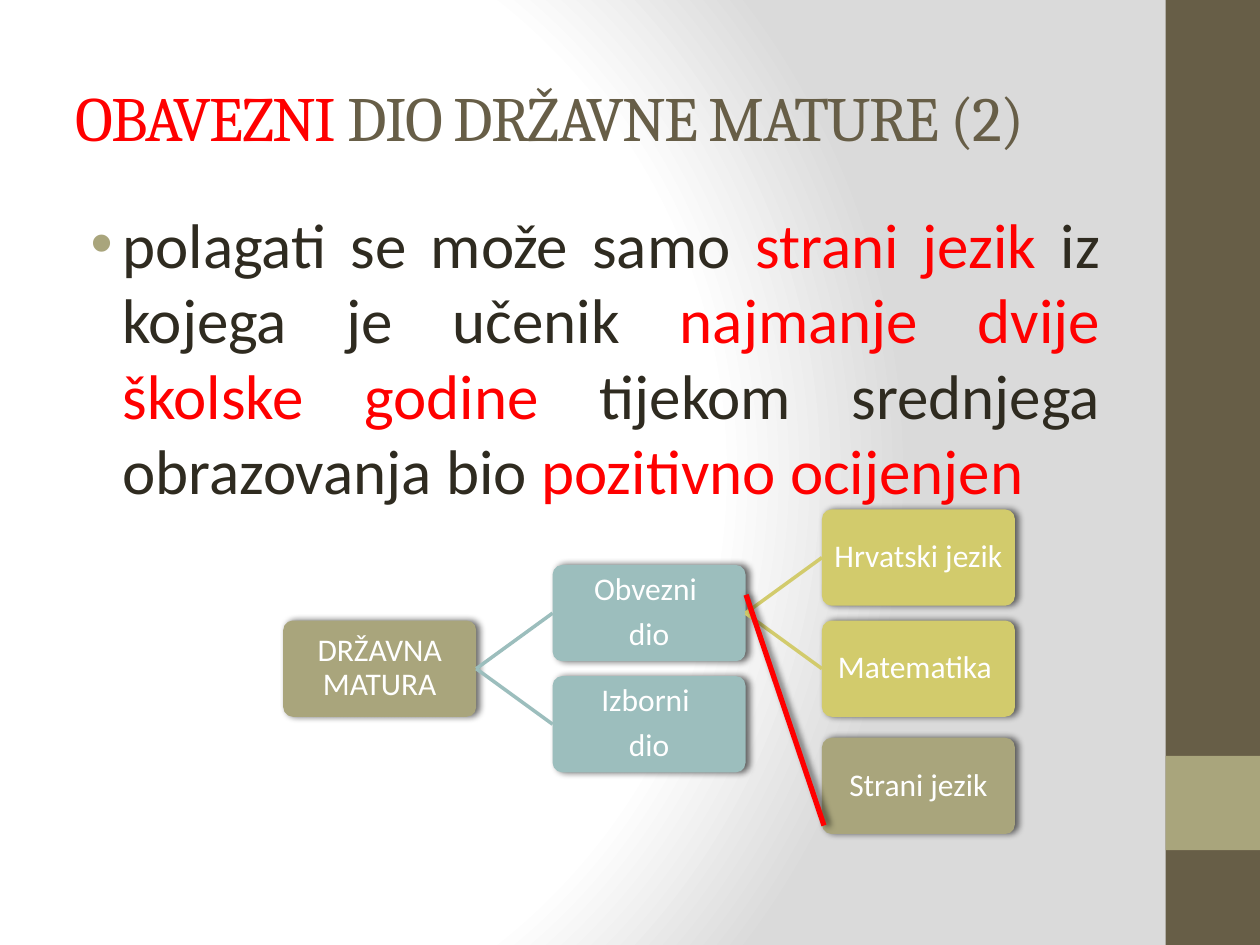
import lxml.etree
import pptx
import pptx.dml.color
import pptx.enum.shapes
import pptx.enum.text
import pptx.oxml
import pptx.oxml.ns
import pptx.util
from pptx.util import Cm

COLORS = {
    "white": "FFFFFF", "grey": "DADADA", "brown": "675E47", "olive": "A9A57C",
    "teal": "9CBEBD", "yellow": "D2CB6C", "red": "FF0000", "ink": "2F2B20", "black": "000000",
}
TITLE = [("OBAVEZNI", "red"), (" DIO DRŽAVNE MATURE (2)", "brown")]
BODY = [
    ("polagati se može samo ", "ink"), ("strani jezik", "red"),
    (" iz kojega je učenik ", "ink"), ("najmanje dvije školske godine", "red"),
    (" tijekom srednjega obrazovanja bio ", "ink"), ("pozitivno ocijenjen", "red"),
]
NODES = {
    "exam": (["DRŽAVNA MATURA"], 0, 2, "olive"),
    "required": (["Obvezni ", "dio"], 1, 1, "teal"),
    "elective": (["Izborni ", "dio"], 1, 3, "teal"),
    "croatian": (["Hrvatski jezik"], 2, 0, "yellow"),
    "maths": (["Matematika "], 2, 2, "yellow"),
    "foreign": (["Strani jezik"], 2, 4.11, "olive"),
}
LINKS = [("exam", "required"), ("exam", "elective"), ("required", "croatian"), ("required", "maths")]
TREE_LEFT, TREE_TOP, COLUMN_STEP, ROW_STEP = 5.71, 10.27, 5.43, 1.12
NODE_WIDTH, NODE_HEIGHT = 3.89, 1.94
SHAPES = pptx.enum.shapes.MSO_SHAPE
ALIGN = pptx.enum.text.PP_ALIGN
MIDDLE = pptx.enum.text.MSO_ANCHOR.MIDDLE
NAMESPACE = pptx.oxml.ns.nsdecls("a")


def rgb(name):
    return pptx.dml.color.RGBColor.from_string(COLORS[name])


def set_background(slide):
    stops = "".join(
        f'<a:gs pos="{position}000"><a:srgbClr val="{COLORS[name]}"/></a:gs>'
        for position, name in [(0, "white"), (75, "white"), (100, "grey")])
    fill = pptx.oxml.parse_xml(
        f'<a:gradFill {NAMESPACE} rotWithShape="1"><a:gsLst>{stops}</a:gsLst><a:path path="circle">'
        '<a:fillToRect l="20000" t="50000" r="100000" b="50000"/></a:path></a:gradFill>')
    slide.background.fill.gradient()
    gradient = slide.element.find(".//" + pptx.oxml.ns.qn("a:gradFill"))
    gradient.getparent().replace(gradient, fill)


def set_effects(shape, shadow):
    properties = shape.element.spPr
    for effects in properties.findall(pptx.oxml.ns.qn("a:effectLst")):
        properties.remove(effects)
    content = (
        '<a:outerShdw blurRad="50800" dist="25400" dir="0" rotWithShape="0">'
        f'<a:srgbClr val="{COLORS["black"]}"><a:alpha val="60000"/></a:srgbClr></a:outerShdw>'
    ) if shadow else ""
    properties.append(pptx.oxml.parse_xml(f"<a:effectLst {NAMESPACE}>{content}</a:effectLst>"))


def add_block(slide, kind, left, top, width, height, color):
    block = slide.shapes.add_shape(kind, Cm(left), Cm(top), Cm(width), Cm(height))
    block.shadow.inherit = False
    block.fill.solid()
    block.fill.fore_color.rgb = rgb(color)
    block.line.fill.background()
    return block


def style_run(span, font, size, color):
    span.font.name = font
    span.font.size = pptx.util.Pt(size)
    span.font.color.rgb = rgb(color)


def add_rich_text(slide, left, top, width, height, pieces, font):
    box = slide.shapes.add_textbox(Cm(left), Cm(top), Cm(width), Cm(height))
    box.text_frame.word_wrap = True
    para = box.text_frame.paragraphs[0]
    for text, color in pieces:
        span = para.add_run()
        span.text = text
        style_run(span, font, 36, color)
    return box.text_frame


def node_position(name):
    column, row = NODES[name][1:3]
    return TREE_LEFT + column * COLUMN_STEP, TREE_TOP + row * ROW_STEP


def add_node(slide, name):
    lines, color = NODES[name][0], NODES[name][3]
    node = add_block(slide, SHAPES.ROUNDED_RECTANGLE, *node_position(name), NODE_WIDTH, NODE_HEIGHT, color)
    node.adjustments[0] = 0.1
    set_effects(node, True)
    frame = node.text_frame
    frame.word_wrap = True
    frame.vertical_anchor = MIDDLE
    frame.margin_left = frame.margin_right = frame.margin_top = frame.margin_bottom = Cm(0.03)
    frame.text = "\n".join(lines)
    for para in frame.paragraphs:
        para.alignment = ALIGN.CENTER
        para.line_spacing = 0.9
        para.space_after = pptx.util.Pt(6.3)
        style_run(para.runs[0], "Calibri", 18, "white")


def add_line(slide, start, end, color, weight, shadow=False):
    line = slide.shapes.add_connector(
        pptx.enum.shapes.MSO_CONNECTOR.STRAIGHT, *(Cm(value) for value in (*start, *end)))
    line.line.color.rgb = rgb(color)
    line.line.width = pptx.util.Pt(weight)
    set_effects(line, shadow)


def add_link(slide, parent, child):
    parent_left, parent_top = node_position(parent)
    child_left, child_top = node_position(child)
    middle = NODE_HEIGHT / 2
    add_line(slide, (parent_left + NODE_WIDTH, parent_top + middle),
             (child_left, child_top + middle), NODES[child][3], 2)


def add_bullet(para, color):
    properties = para._p.get_or_add_pPr()
    properties.set("marL", str(Cm(0.95)))
    properties.set("indent", str(-Cm(0.64)))
    for bullet in (f'<a:buClr {NAMESPACE}><a:srgbClr val="{COLORS[color]}"/></a:buClr>',
                   f'<a:buFont {NAMESPACE} typeface="Arial"/>',
                   f'<a:buChar {NAMESPACE} char="•"/>'):
        properties.append(pptx.oxml.parse_xml(bullet))


def main():
    deck = pptx.Presentation()
    deck.slide_width, deck.slide_height = Cm(25.4), Cm(19.05)
    slide = deck.slides.add_slide(deck.slide_layouts[6])
    set_background(slide)
    add_block(slide, SHAPES.RECTANGLE, 23.5, 0, 1.9, 19.05, "brown")
    add_block(slide, SHAPES.RECTANGLE, 23.5, 15.24, 1.9, 1.9, "olive")

    title = add_rich_text(slide, 1.27, 0.76, 21.16, 3.18, TITLE, "Cambria")
    title.vertical_anchor = MIDDLE
    for span in title.paragraphs[0].runs:
        span.font._element.set("spc", "-100")

    body = add_rich_text(slide, 1.27, 4.01, 21.16, 13.34, BODY, "Calibri").paragraphs[0]
    body.alignment = ALIGN.JUSTIFY
    add_bullet(body, "olive")

    for name in NODES:
        add_node(slide, name)
    for parent, child in LINKS:
        add_link(slide, parent, child)
    add_line(slide, (15.04, 11.99), (16.61, 16.64), "red", 3, shadow=True)
    deck.save("out.pptx")


if __name__ == "__main__":
    main()
